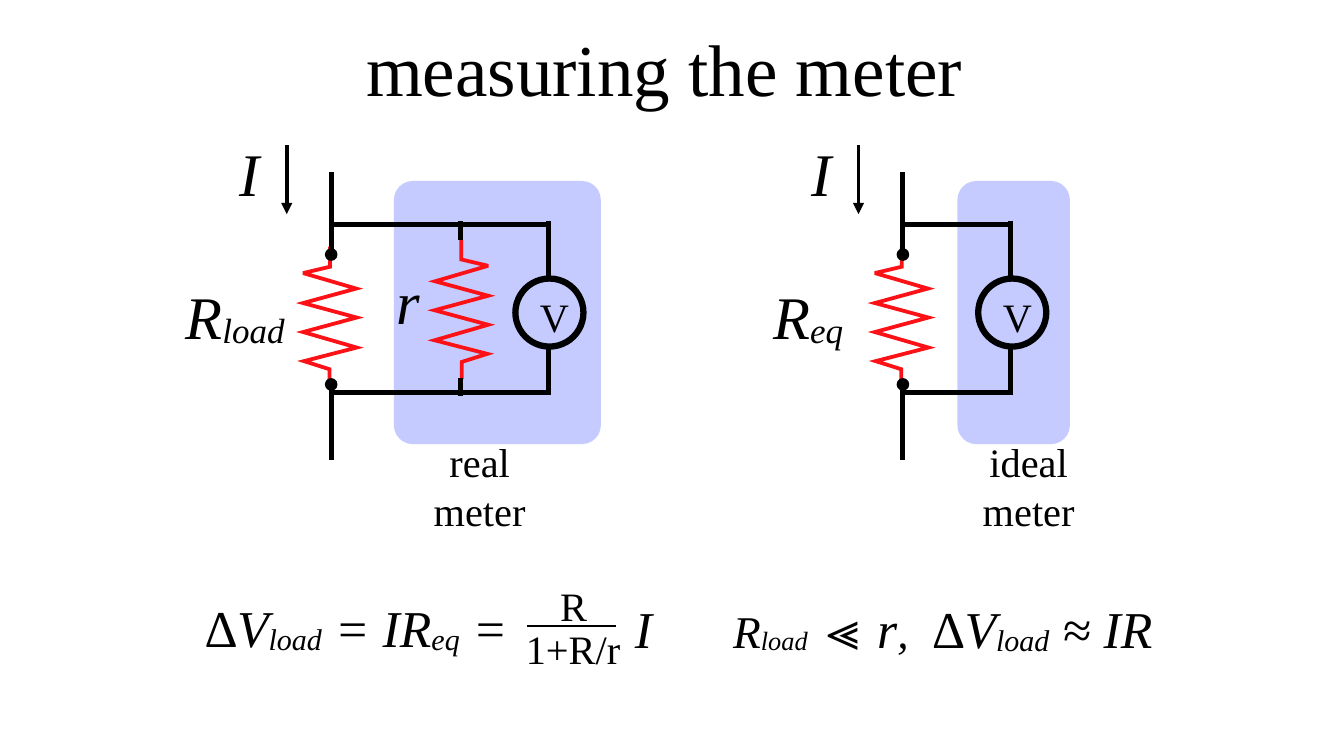
from lxml.etree import SubElement
from pptx import Presentation
from pptx.dml.color import RGBColor
from pptx.enum.shapes import MSO_CONNECTOR, MSO_SHAPE
from pptx.enum.text import MSO_ANCHOR, PP_ALIGN
from pptx.oxml.ns import qn
from pptx.util import Pt

BLACK = RGBColor(0x00, 0x00, 0x00)
RED = RGBColor(0xFC, 0x12, 0x16)
BLUE = RGBColor(0x2F, 0x45, 0xFF)

deck = Presentation()
deck.slide_width, deck.slide_height = Pt(1066.3), Pt(599.8)
slide = deck.slides.add_slide(deck.slide_layouts[6])
shapes = slide.shapes


def add_text(paragraphs, left, top, width, height, size=32, italic=False,
             align=PP_ALIGN.CENTER, anchor=MSO_ANCHOR.MIDDLE, inset=3):
    """Each paragraph is a list of runs: text or (text, size); "_" lowers a run."""
    frame = shapes.add_textbox(Pt(left), Pt(top), Pt(width), Pt(height)).text_frame
    frame.word_wrap = False
    frame.vertical_anchor = anchor
    frame.margin_left = frame.margin_right = Pt(inset)
    frame.margin_top = frame.margin_bottom = Pt(inset)
    for number, runs in enumerate(paragraphs):
        paragraph = frame.add_paragraph() if number else frame.paragraphs[0]
        paragraph.alignment = align
        for item in runs:
            words, run_size = (item, size) if isinstance(item, str) else item
            run = paragraph.add_run()
            run.text = words.removeprefix("_")
            run.font.name = "Times New Roman"
            run.font.size = Pt(run_size)
            run.font.italic = italic
            run.font.color.rgb = BLACK
            if words.startswith("_"):
                run._r.get_or_add_rPr().set("baseline", "-6000")


def add_wire(x1, y1, x2, y2, weight=4, arrow=False):
    wire = shapes.add_connector(MSO_CONNECTOR.STRAIGHT, Pt(x1), Pt(y1), Pt(x2), Pt(y2))
    wire.line.color.rgb = BLACK
    wire.line.width = Pt(weight)
    if arrow:
        SubElement(wire.line._get_or_add_ln(), qn("a:tailEnd"), type="triangle")
    SubElement(wire._element.spPr, qn("a:effectLst"))


# Title
add_text([["measuring the meter"]], 205.2, 15.8, 643.7, 74.9, size=58)

# Resistor outline: offset from the wire, height on the slide
ZIGZAG = [(-1, 195.8), (-1, 211.7), (-22.3, 216.7), (19.8, 229), (-22.3, 240.5),
          (20.2, 252), (-22.3, 263.5), (20.2, 275.8), (-21.6, 286.6),
          (-1.4, 293), (-1.4, 306.7)]
BLOCK_TOP, TOP_RAIL, BOTTOM_RAIL = 143.6, 177.8, 311.8

# Circuits: main wire, meter wire, inner resistor, block, resistor label, meter name
circuits = [
    (262.8, 434.9, 365, (312.5, 164.2), ("_load", 139, 95), ("real", 340.6)),
    (716.4, 802.1, None, (759.6, 89.3), ("_eq", 607, 68.4), ("ideal", 776.2)),
]
for main, meter, inner, block, resistance, name in circuits:
    # Shaded block around the meter
    block_left, block_width = block
    shade = shapes.add_shape(MSO_SHAPE.ROUNDED_RECTANGLE, Pt(block_left), Pt(BLOCK_TOP),
                             Pt(block_width), Pt(208.8))
    shade.adjustments[0] = 15 / block_width
    shade.shadow.inherit = False
    shade.fill.solid()
    shade.fill.fore_color.rgb = BLUE
    tint = shade._element.spPr.find(qn("a:solidFill")).find(qn("a:srgbClr"))
    SubElement(tint, qn("a:alpha"), val="28000")
    shade.line.fill.background()

    # Resistors; the inner one is mirrored and sits slightly higher
    resistors = [(main, 1, 0)] + ([(inner, -1, -5.8)] if inner else [])
    for x, side, shift in resistors:
        points = [(Pt(x + side * dx), Pt(y + shift)) for dx, y in ZIGZAG]
        builder = shapes.build_freeform(*points[0])
        builder.add_line_segments(points[1:], close=False)
        resistor = builder.convert_to_shape()
        resistor.shadow.inherit = False
        resistor.fill.background()
        resistor.line.color.rgb = RED
        resistor.line.width = Pt(3)
        SubElement(resistor.line._get_or_add_ln(), qn("a:miter"), lim="400000")

    # Wires
    add_wire(main, 136.8, main, 202.3)
    add_wire(main, 304.6, main, 365)
    add_wire(meter, 175.7, meter, 220.3)
    add_wire(meter, 275.8, meter, BOTTOM_RAIL)
    for rail in (TOP_RAIL, BOTTOM_RAIL):
        add_wire(meter + 2, rail, main - 1, rail)
    if inner:
        add_wire(inner, 175.7, inner, 190.1)
        add_wire(inner, 300.2, inner, 313.9)
        add_text([["r"]], 310.3, 205.2, 26.6, 66.2, size=48, italic=True, inset=4.3)

    # Terminals and meter dial
    for x, y, size, weight in [(main, 202, 8, 2), (main, 305, 8, 2), (meter + 1, 248, 54, 5)]:
        circle = shapes.add_shape(MSO_SHAPE.OVAL, Pt(x - size / 2), Pt(y - size / 2),
                                  Pt(size), Pt(size))
        circle.shadow.inherit = False
        if size == 8:
            circle.fill.solid()
            circle.fill.fore_color.rgb = BLACK
        else:
            circle.fill.background()
        circle.line.color.rgb = BLACK
        circle.line.width = Pt(weight)
    add_text([["V"]], meter - 10.8, 227.5, 35, 46.8, align=PP_ALIGN.LEFT,
             anchor=MSO_ANCHOR.TOP, inset=4.3)

    # Current and labels
    add_wire(main - 35.3, 115.2, main - 35.3, 169.9, weight=3, arrow=True)
    add_text([["I"]], main - 76.8, 103.7, 24.5, 66.2, size=48, italic=True, inset=4.3)
    subscript, label_left, label_width = resistance
    add_text([["R", subscript]], label_left, 217.4, label_width, 66.2,
             size=48, italic=True, inset=4.3)
    kind, name_left = name
    add_text([[kind], ["meter"]], name_left, 343.8, 79.9, 83.5)

# Load voltage equation
add_text([["∆V", "_load", " = IR", "_eq", " = "]], 154.1, 469.4, 267.8, 55.4,
         size=41, italic=True)
add_text([["R"]], 441.4, 457.9, 27.4, 44.6)
add_text([["1+R/r"]], 414, 491.8, 81.4, 44.6)
add_wire(418.3, 496.8, 488.9, 496.8, weight=2)
add_text([[" I"]], 490.3, 470.2, 30.2, 55.4, size=41, italic=True)

# Small load approximation
add_text([[("R", 36), ("_load", 36), " ", ("≪ ", 36), "r", (", ", 36),
           " ∆V", "_load", " ≈ IR"]], 573.1, 470.2, 349.9, 55.4, size=41, italic=True)

deck.save("out.pptx")
